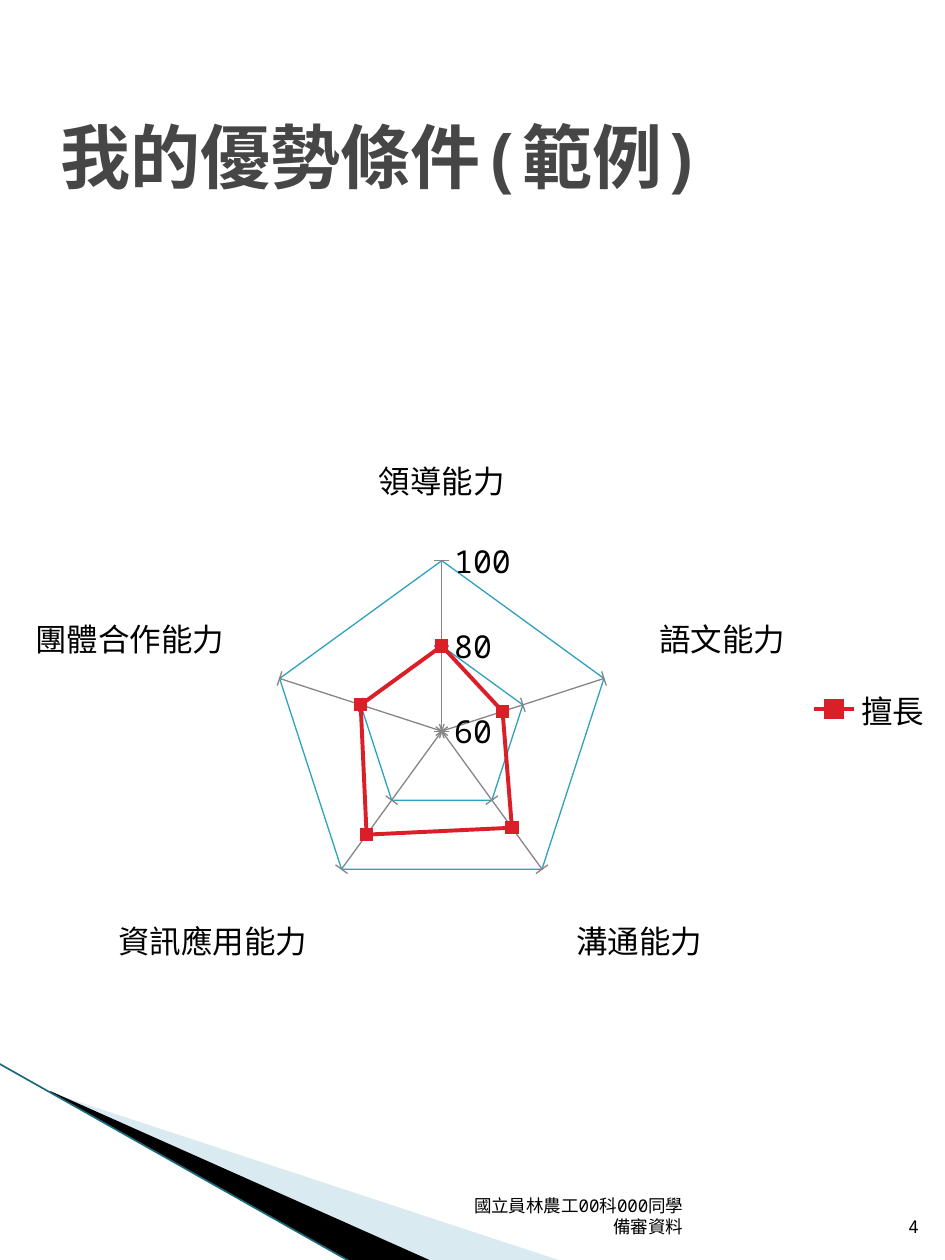
from lxml.etree import SubElement
from pptx import Presentation
from pptx.chart.data import CategoryChartData
from pptx.dml.color import RGBColor
from pptx.enum.chart import XL_CHART_TYPE as ChartType, XL_LEGEND_POSITION as LegendPos
from pptx.enum.chart import XL_MARKER_STYLE as Marker, XL_TICK_MARK as Tick
from pptx.enum.shapes import MSO_CONNECTOR as Connector
from pptx.enum.text import MSO_ANCHOR as Anchor, PP_ALIGN as Align
from pptx.oxml.ns import qn
from pptx.util import Pt

FONT = "Noto Sans Mono"
BLACK = RGBColor(0x00, 0x00, 0x00)
TITLE_GRAY = RGBColor(0x46, 0x46, 0x46)
AXIS_GRAY = RGBColor(0x86, 0x86, 0x86)
GRID_TEAL = RGBColor(0x2D, 0xA2, 0xBF)
EDGE_TEAL = RGBColor(0x1A, 0x6A, 0x7C)
PALE_BLUE = RGBColor(0xA0, 0xCB, 0xDC)
RED = RGBColor(0xDA, 0x1F, 0x28)

TITLE = "我的優勢條件(範例)"
FOOTER = "國立員林農工00科000同學備審資料"
PAGE_NUMBER = "4"
SERIES = "擅長"
SCORES = {"領導能力": 80, "語文能力": 75, "溝通能力": 88, "資訊應用能力": 90, "團體合作能力": 80}
WEDGES = [
    ([(29.5, 624.6), (321.1, 720.7), (246.2, 720.7), (29.5, 624.2)], PALE_BLUE, 40),
    ([(28.8, 623.5), (247, 720.7), (200.9, 721.4), (28.8, 624.2)], BLACK, 100),
]
EDGE = [(-0.7, 607.7), (200.9, 721.4)]


def put_text(shape, text, size, color=BLACK, bold=False, align=Align.LEFT, anchor=Anchor.BOTTOM):
    frame = shape.text_frame
    frame.word_wrap = True
    frame.vertical_anchor = anchor
    frame.text = text
    paragraph = frame.paragraphs[0]
    paragraph.alignment = align
    font = paragraph.runs[0].font
    font.name, font.size, font.bold = FONT, Pt(size), bold
    font.color.rgb = color
    properties = font._element
    for tag in ("a:ea", "a:cs"):
        SubElement(properties, qn(tag), typeface=FONT)


def add_wedge(shapes, points, color, opacity):
    corners = [(Pt(x), Pt(y)) for x, y in points]
    builder = shapes.build_freeform(*corners[0], scale=1.0)
    builder.add_line_segments(corners[1:], close=True)
    wedge = builder.convert_to_shape()
    wedge.shadow.inherit = False
    wedge.fill.solid()
    wedge.fill.fore_color.rgb = color
    wedge.line.fill.background()
    if opacity < 100:
        fill_color = wedge._element.spPr.find(qn("a:solidFill"))[0]
        SubElement(fill_color, qn("a:alpha"), val=str(opacity * 1000))


def set_line(line, color, width):
    line.color.rgb = color
    line.width = Pt(width)


def add_radar(shapes):
    data = CategoryChartData()
    data.categories = list(SCORES)
    data.add_series(SERIES, list(SCORES.values()))
    radar = shapes.add_chart(
        ChartType.RADAR_MARKERS, Pt(9.4), Pt(144.7), Pt(530.6), Pt(521.3), data
    ).chart
    radar.font.name, radar.font.size = FONT, Pt(18)
    radar.font.color.rgb = BLACK
    radar.has_title = False
    radar.has_legend = True
    radar.legend.position = LegendPos.RIGHT
    radar.legend.include_in_layout = False
    radar.plots[0].vary_by_categories = False

    scale = radar.value_axis
    scale.minimum_scale, scale.maximum_scale, scale.major_unit = 60, 100, 20
    scale.major_tick_mark = Tick.CROSS
    scale.tick_labels.number_format = "General"
    scale.tick_labels.number_format_is_linked = False
    scale.has_major_gridlines = True
    set_line(scale.major_gridlines.format.line, GRID_TEAL, 0.75)
    set_line(scale.format.line, AXIS_GRAY, 0.75)
    radar.category_axis.major_tick_mark = Tick.NONE

    strengths = radar.plots[0].series[0]
    strengths.smooth = False
    set_line(strengths.format.line, RED, 2.25)
    strengths.marker.style = Marker.SQUARE
    strengths.marker.size = 7
    strengths.marker.format.fill.solid()
    strengths.marker.format.fill.fore_color.rgb = RED
    set_line(strengths.marker.format.line, RED, 0.75)


def main():
    deck = Presentation()
    deck.slide_width, deck.slide_height = Pt(540), Pt(720)
    slide = deck.slides.add_slide(deck.slide_layouts[5])
    shapes = slide.shapes

    for points, color, opacity in WEDGES:
        add_wedge(shapes, points, color, opacity)
    (x1, y1), (x2, y2) = EDGE
    edge = shapes.add_connector(Connector.STRAIGHT, Pt(x1), Pt(y1), Pt(x2), Pt(y2))
    set_line(edge.line, EDGE_TEAL, 0.95)
    SubElement(edge._element.spPr, qn("a:effectLst"))

    add_radar(shapes)

    title = shapes.title
    title.left, title.top, title.width, title.height = Pt(27.4), Pt(28.8), Pt(486), Pt(120.2)
    put_text(title, TITLE, 40, color=TITLE_GRAY, bold=True, anchor=Anchor.MIDDLE)
    for text, left, width in ((PAGE_NUMBER, 510.5, 21.6), (FOOTER, 258.5, 139)):
        box = shapes.add_textbox(Pt(left), Pt(672.5), Pt(width), Pt(38.2))
        put_text(box, text, 10, align=Align.RIGHT)

    deck.save("out.pptx")


if __name__ == "__main__":
    main()
